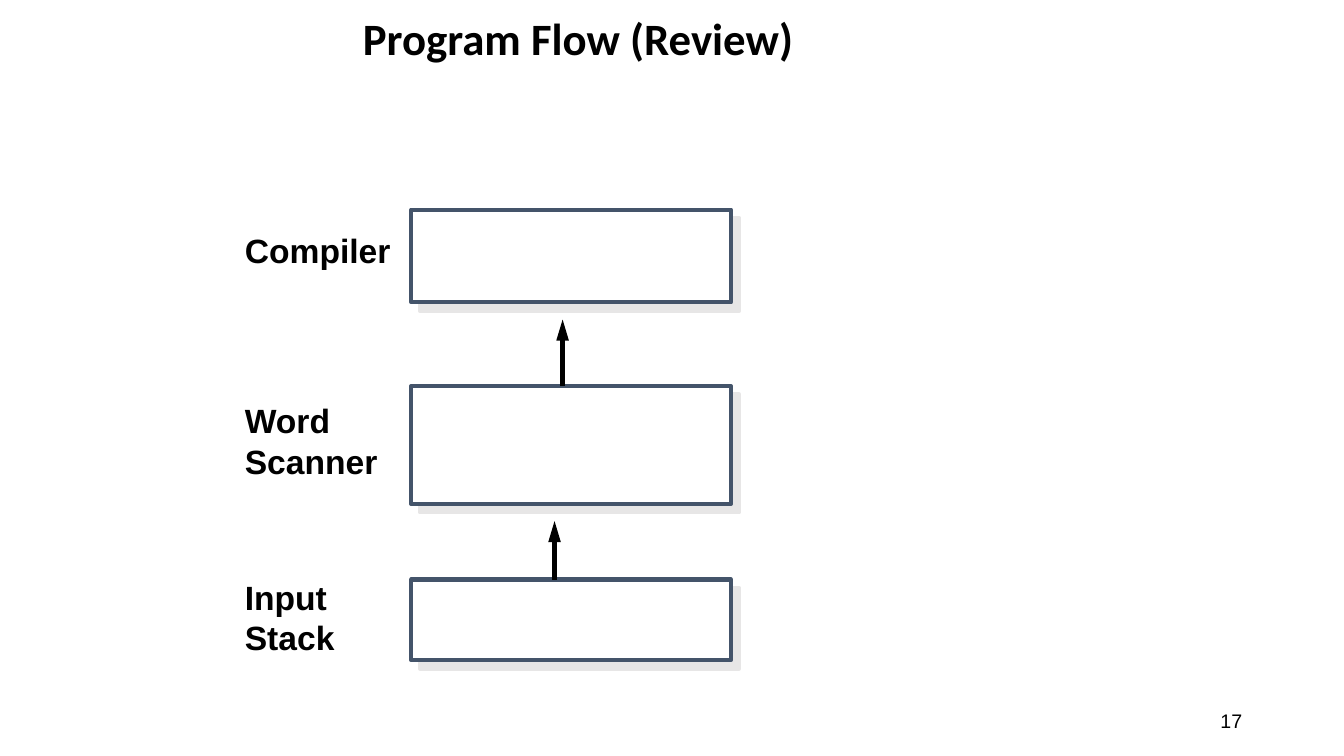
from dataclasses import dataclass

from lxml import etree
from pptx import Presentation
from pptx.dml.color import RGBColor
from pptx.enum.shapes import MSO_CONNECTOR, MSO_SHAPE
from pptx.enum.text import MSO_ANCHOR, MSO_AUTO_SIZE, PP_ALIGN
from pptx.oxml.ns import qn
from pptx.slide import Slide
from pptx.util import Inches, Pt

RECTANGLE = MSO_SHAPE.RECTANGLE
STRAIGHT = MSO_CONNECTOR.STRAIGHT
TOP, MIDDLE = MSO_ANCHOR.TOP, MSO_ANCHOR.MIDDLE
LEFT, RIGHT = PP_ALIGN.LEFT, PP_ALIGN.RIGHT
NO_AUTOFIT, GROW = MSO_AUTO_SIZE.NONE, MSO_AUTO_SIZE.SHAPE_TO_FIT_TEXT


@dataclass(frozen=True)
class Theme:
    ink: str = "000000"
    paper: str = "FFFFFF"
    border: str = "44546A"
    shadow: str = "E7E6E6"
    title_font: str = "Calibri"
    body_font: str = "Arial"
    title_size: int = 32
    label_size: int = 24
    number_size: int = 14
    line_width: int = 3
    shadow_distance: float = 8.5
    shadow_angle: int = 45


@dataclass(frozen=True)
class Label:
    text: str
    left: float
    top: float
    width: float
    height: float
    size: int
    font: str
    bold: bool = True
    align: PP_ALIGN = LEFT
    anchor: MSO_ANCHOR = TOP
    auto_size: MSO_AUTO_SIZE = NO_AUTOFIT
    wrap: bool = True


@dataclass(frozen=True)
class Stage:
    name: str
    box_top: float
    box_height: float
    label_top: float
    label_width: float
    label_height: float
    wrap: bool = True


@dataclass(frozen=True)
class Arrow:
    x: float
    start_y: float
    end_y: float


THEME = Theme()
LABEL_LEFT = 2.33
BOX_LEFT, BOX_WIDTH = 4.08, 3.17

HEADINGS = [
    Label("Program Flow (Review)", 3.5, 0, 5.07, 0.75,
          THEME.title_size, THEME.title_font, anchor=MIDDLE),
    Label("17", 9.42, 6.95, 3, 0.4, THEME.number_size, THEME.body_font,
          bold=False, align=RIGHT, anchor=MIDDLE),
]
STAGES = [
    Stage("Input\nStack", 5.75, 0.8, 5.67, 1.25, 0.91),
    Stage("Word\nScanner", 3.83, 1.17, 3.92, 1.67, 0.91),
    Stage("Compiler", 2.08, 0.92, 2.23, 1.65, 0.5, wrap=False),
]
ARROWS = [Arrow(5.5, 5.75, 5.17), Arrow(5.58, 3.83, 3.17)]


def rgb(value: str) -> RGBColor:
    return RGBColor.from_string(value)


def add_label(s: Slide, label: Label) -> None:
    sp = s.shapes.add_textbox(Inches(label.left), Inches(label.top),
                              Inches(label.width), Inches(label.height))
    tf = sp.text_frame
    tf.word_wrap = label.wrap
    tf.auto_size = label.auto_size
    tf.vertical_anchor = label.anchor
    p = tf.paragraphs[0]
    p.alignment = label.align
    for i, line in enumerate(label.text.split("\n")):
        if i:
            p.add_line_break()
        r = p.add_run()
        r.text = line
        r.font.name = label.font
        r.font.size = Pt(label.size)
        r.font.bold = label.bold
        r.font.color.rgb = rgb(THEME.ink)


def add_box(s: Slide, stage: Stage) -> None:
    sp = s.shapes.add_shape(RECTANGLE, Inches(BOX_LEFT), Inches(stage.box_top),
                            Inches(BOX_WIDTH), Inches(stage.box_height))
    sp.fill.solid()
    sp.fill.fore_color.rgb = rgb(THEME.paper)
    sp.line.color.rgb = rgb(THEME.border)
    sp.line.width = Pt(THEME.line_width)
    sp.shadow.inherit = False
    effects = sp.element.spPr.find(qn("a:effectLst"))
    shadow = etree.SubElement(
        effects, qn("a:outerShdw"), blurRad="0",
        dist=str(Pt(THEME.shadow_distance)),
        dir=str(THEME.shadow_angle * 60000),
        algn="ctr", rotWithShape="0")
    etree.SubElement(shadow, qn("a:srgbClr"), val=THEME.shadow)


def add_stage_label(s: Slide, stage: Stage) -> None:
    add_label(s, Label(stage.name, LABEL_LEFT, stage.label_top,
                       stage.label_width, stage.label_height,
                       THEME.label_size, THEME.body_font,
                       auto_size=GROW, wrap=stage.wrap))


def add_arrow(s: Slide, arrow: Arrow) -> None:
    sp = s.shapes.add_connector(STRAIGHT, Inches(arrow.x), Inches(arrow.start_y),
                                Inches(arrow.x), Inches(arrow.end_y))
    sp.line.color.rgb = rgb(THEME.ink)
    sp.line.width = Pt(THEME.line_width)
    etree.SubElement(sp.line._get_or_add_ln(), qn("a:tailEnd"),
                     type="triangle", w="med", len="lg")
    etree.SubElement(sp.element.spPr, qn("a:effectLst"))


def main() -> None:
    prs = Presentation()
    prs.slide_width, prs.slide_height = Inches(13.33), Inches(7.5)
    s = prs.slides.add_slide(prs.slide_layouts[6])
    for heading in HEADINGS:
        add_label(s, heading)
    for stage in STAGES:
        add_stage_label(s, stage)
    for stage in STAGES:
        add_box(s, stage)
    for arrow in ARROWS:
        add_arrow(s, arrow)
    prs.save("out.pptx")


if __name__ == "__main__":
    main()
